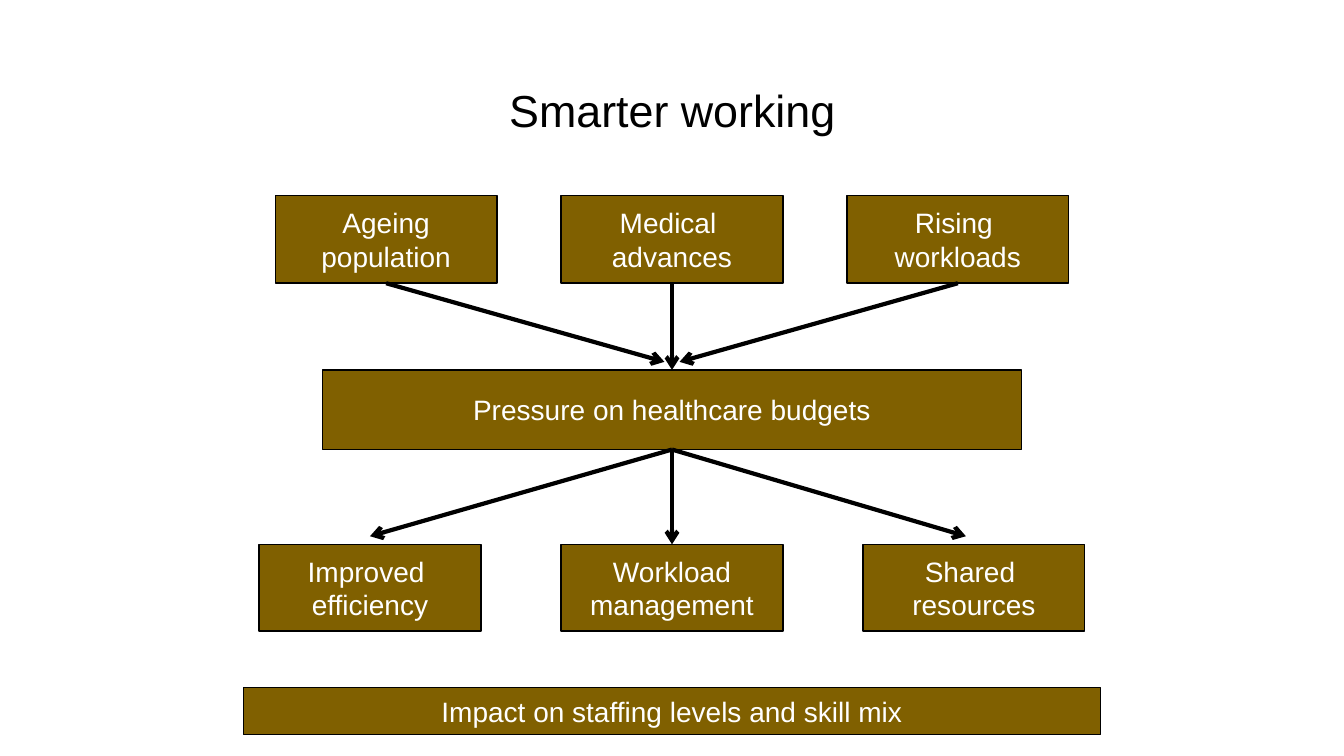
import dataclasses

import lxml.etree
import pptx
import pptx.dml.color
import pptx.enum.shapes
import pptx.enum.text
import pptx.oxml.ns
import pptx.util

Inches = pptx.util.Inches
Pt = pptx.util.Pt
BOTTOM, TOP = 2, 0


@dataclasses.dataclass(frozen=True)
class Theme:
    font: str = "Arial"
    ink: str = "000000"
    box_fill: str = "806000"
    box_text: str = "FFFFFF"
    title_size: int = 32
    box_size: int = 20
    outline: float = 1
    arrow: float = 3


def rgb(value):
    return pptx.dml.color.RGBColor.from_string(value)


def write_text(frame, text, *, font, size, color, spacing=1.0):
    """Fill a frame with centred text, one paragraph per line."""
    frame.word_wrap = True
    frame.vertical_anchor = pptx.enum.text.MSO_ANCHOR.MIDDLE
    for index, line in enumerate(text.split("\n")):
        paragraph = frame.paragraphs[0] if index == 0 else frame.add_paragraph()
        paragraph.alignment = pptx.enum.text.PP_ALIGN.CENTER
        paragraph.line_spacing = spacing
        run = paragraph.add_run()
        run.text = line
        run.font.name = font
        run.font.size = Pt(size)
        run.font.color.rgb = rgb(color)


class Diagram:
    def __init__(self, slide, theme):
        self.slide = slide
        self.theme = theme

    def title(self, text, left, top, width, height):
        heading = self.slide.shapes.add_textbox(
            Inches(left), Inches(top), Inches(width), Inches(height))
        write_text(heading.text_frame, text, font=self.theme.font,
                   size=self.theme.title_size, color=self.theme.ink, spacing=0.9)

    def box(self, text, center, top, width, height):
        box = self.slide.shapes.add_shape(
            pptx.enum.shapes.MSO_SHAPE.RECTANGLE,
            Inches(center - width / 2), Inches(top), Inches(width), Inches(height))
        box.shadow.inherit = False
        box.fill.solid()
        box.fill.fore_color.rgb = rgb(self.theme.box_fill)
        box.line.color.rgb = rgb(self.theme.ink)
        box.line.width = Pt(self.theme.outline)
        write_text(box.text_frame, text, font=self.theme.font,
                   size=self.theme.box_size, color=self.theme.box_text)
        return box

    def arrow(self, source, target=None, tip=(0, 0)):
        """Point from the foot of source to the top of target, or to a free tip."""
        arrow = self.slide.shapes.add_connector(
            pptx.enum.shapes.MSO_CONNECTOR.STRAIGHT,
            0, 0, Inches(tip[0]), Inches(tip[1]))
        arrow.begin_connect(source, BOTTOM)
        if target is not None:
            arrow.end_connect(target, TOP)
        arrow.line.color.rgb = rgb(self.theme.ink)
        arrow.line.width = Pt(self.theme.arrow)
        qn = pptx.oxml.ns.qn
        lxml.etree.SubElement(arrow.line._get_or_add_ln(), qn("a:tailEnd"), type="arrow")
        lxml.etree.SubElement(arrow._element.spPr, qn("a:effectLst"))


def main():
    presentation = pptx.Presentation()
    presentation.slide_width = Inches(13.33)
    presentation.slide_height = Inches(7.5)
    slide = presentation.slides.add_slide(presentation.slide_layouts[6])
    diagram = Diagram(slide, Theme())
    middle = 6.665

    diagram.title("Smarter working", 0.92, 0.4, 11.5, 1.45)

    # Pressure bar, with its causes above and its responses below
    pressure = diagram.box("Pressure on healthcare budgets", middle, 3.67, 6.93, 0.79)
    cause_texts = ["Ageing\npopulation", "Medical \nadvances", "Rising \nworkloads"]
    response_texts = ["Improved \nefficiency", "Workload\nmanagement", "Shared \nresources"]
    causes = [diagram.box(text, middle + step * 2.835, 1.94, 2.2, 0.87)
              for step, text in enumerate(cause_texts, -1)]
    responses = [diagram.box(text, middle + step * 2.995, 5.4, 2.2, 0.86)
                 for step, text in enumerate(response_texts, -1)]

    # Arrows: the outer ones stop just short of the boxes
    diagram.arrow(causes[0], tip=(6.59, 3.59))
    diagram.arrow(causes[2], tip=(6.74, 3.59))
    diagram.arrow(causes[1], pressure)
    diagram.arrow(pressure, tip=(3.67, 5.32))
    diagram.arrow(pressure, tip=(9.58, 5.32))
    diagram.arrow(pressure, responses[1])

    # Overall impact
    diagram.box("Impact on staffing levels and skill mix", middle, 6.82, 8.5, 0.47)

    presentation.save("out.pptx")


if __name__ == "__main__":
    main()
